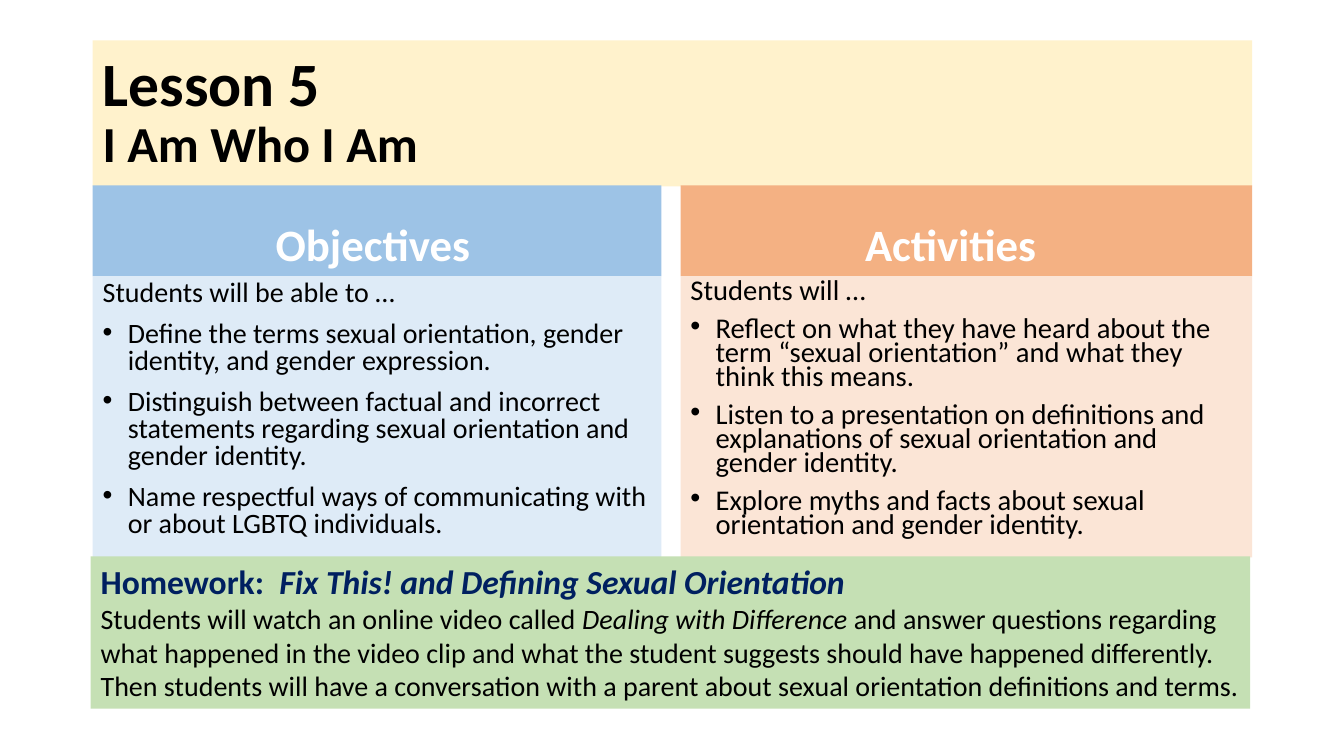
"""Build the Lesson 5 overview slide with objectives, activities and homework."""
from lxml import etree
from pptx import Presentation
from pptx.dml.color import RGBColor
from pptx.enum.shapes import MSO_SHAPE
from pptx.enum.text import MSO_ANCHOR, PP_ALIGN
from pptx.oxml.ns import qn
from pptx.util import Inches, Pt

RECT = MSO_SHAPE.RECTANGLE
TOP, MIDDLE, BOTTOM = MSO_ANCHOR.TOP, MSO_ANCHOR.MIDDLE, MSO_ANCHOR.BOTTOM
LEFT, CENTER = PP_ALIGN.LEFT, PP_ALIGN.CENTER
BLACK = RGBColor(0x00, 0x00, 0x00)
WHITE = RGBColor(0xFF, 0xFF, 0xFF)
NAVY = RGBColor(0x00, 0x20, 0x60)
CREAM = RGBColor(0xFF, 0xF2, 0xCC)
BLUE = RGBColor(0x9D, 0xC3, 0xE6)
PALE = RGBColor(0xDE, 0xEB, 0xF7)
ORANGE = RGBColor(0xF4, 0xB1, 0x83)
PEACH = RGBColor(0xFB, 0xE5, 0xD6)
GREEN = RGBColor(0xC5, 0xE0, 0xB4)

deck = Presentation()
deck.slide_width, deck.slide_height = Inches(13.33), Inches(7.5)
slide = deck.slides.add_slide(deck.slide_layouts[6])


def panel(left, top, width, height, fill, anchor=TOP):
    box = slide.shapes.add_shape(RECT, Inches(left), Inches(top), Inches(width), Inches(height))
    box.shadow.inherit = False
    box.fill.solid()
    box.fill.fore_color.rgb = fill
    box.line.fill.background()
    frame = box.text_frame
    frame.word_wrap = True
    frame.vertical_anchor = anchor
    frame.paragraphs[0].alignment = LEFT
    return frame


def write(para, text, size=20, color=BLACK, bold=False, italic=False):
    run = para.add_run()
    run.text = text
    font = run.font
    font.name, font.size, font.bold, font.italic = "Calibri", Pt(size), bold, italic
    font.color.rgb = color


title = panel(0.92, 0.4, 11.5, 1.45, CREAM, MIDDLE).paragraphs[0]
title.line_spacing = 0.9
write(title, "Lesson 5", size=44, bold=True)
title.add_line_break()
write(title, "I Am Who I Am", size=36, bold=True)

columns = [
    (0.92, 5.64, "Objectives", BLUE, PALE, 0.18, 20, 0.8, [
        "Students will be able to …",
        "Define the terms sexual orientation, gender identity, and gender expression.",
        "Distinguish between factual and incorrect statements regarding sexual orientation and gender identity.",
        "Name respectful ways of communicating with or about LGBTQ individuals.",
    ]),
    (6.75, 5.67, "Activities", ORANGE, PEACH, 0.41, 20.4, 0.7, [
        "Students will …",
        "Reflect on what they have heard about the term “sexual orientation” and what they think this means.",
        "Listen to a presentation on definitions and explanations of sexual orientation and gender identity.",
        "Explore myths and facts about sexual orientation and gender identity.",
    ]),
]
for left, width, name, dark, light, inset, size, pitch, lines in columns:
    head = panel(left, 1.84, width, 0.9, dark, BOTTOM)
    head.margin_right, head.margin_bottom = Inches(inset), Inches(0.06)
    head.paragraphs[0].alignment = CENTER
    head.paragraphs[0].space_after = Pt(0)
    write(head.paragraphs[0], name, size=32, color=WHITE, bold=True)

    body = panel(left, 2.74, width, 2.79, light)
    for i, line in enumerate(lines):
        para = body.add_paragraph() if i else body.paragraphs[0]
        para.alignment = LEFT
        para.line_spacing, para.space_before = pitch, Pt(10)
        write(para, line, size=size)
        if i:
            props = para._p.get_or_add_pPr()
            props.set("marL", str(Inches(0.25)))
            props.set("indent", str(-Inches(0.25)))
            etree.SubElement(props, qn("a:buFont"), typeface="Arial")
            etree.SubElement(props, qn("a:buChar"), char="•")

home = panel(0.9, 5.52, 11.5, 1.51, GREEN)
lead = home.paragraphs[0]
write(lead, "Homework:  ", size=24, color=NAVY, bold=True)
write(lead, "Fix This! and Defining Sexual Orientation", size=24, color=NAVY, bold=True, italic=True)
task = home.add_paragraph()
task.alignment = LEFT
write(task, "Students will watch an online video called ")
write(task, "Dealing with Difference ", italic=True)
write(task, "and answer questions regarding what happened in the video clip and what the student "
            "suggests should have happened differently. Then students will have a conversation "
            "with a parent about sexual orientation definitions and terms.")

deck.save("out.pptx")
